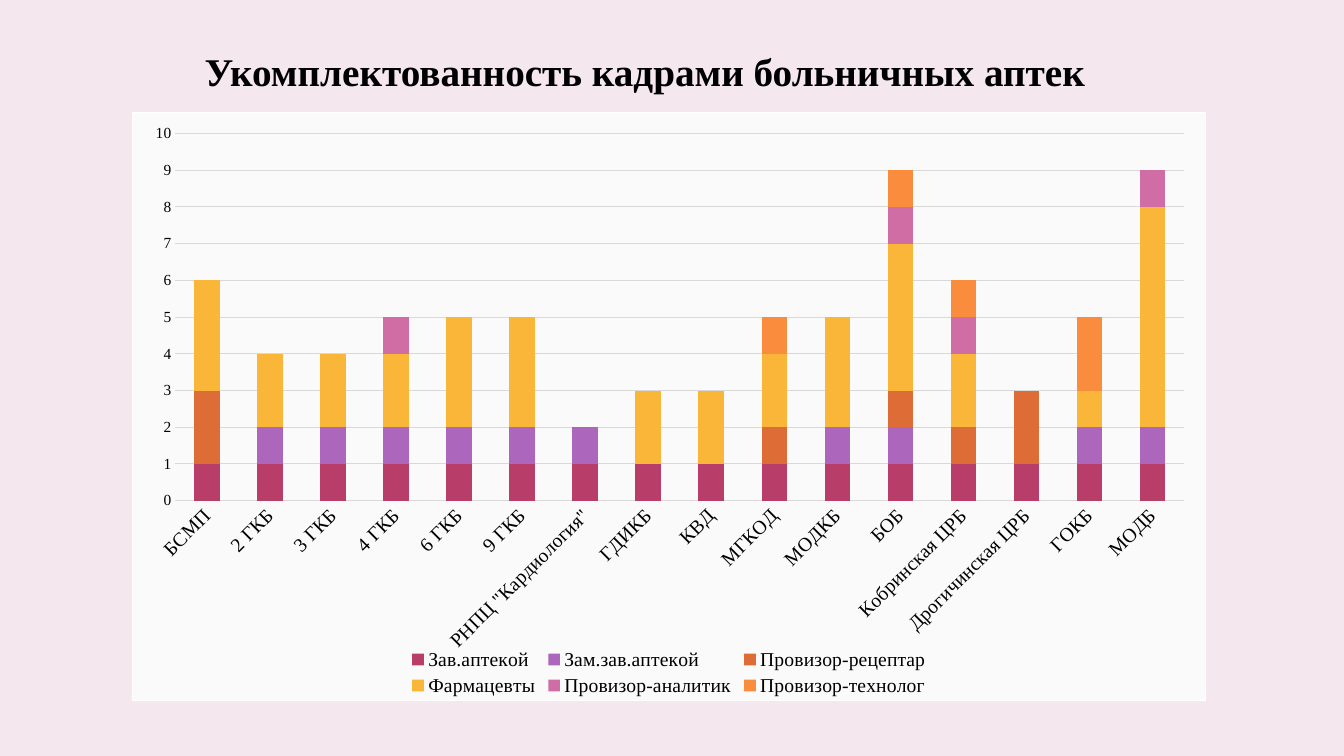
import pptx
import pptx.chart.data
import pptx.dml.color
import pptx.enum.chart
import pptx.enum.text
import pptx.oxml
import pptx.oxml.ns
import pptx.util

Pt = pptx.util.Pt
FONT = "Times New Roman"
COLORS = {
    "background": "F4E7ED", "panel": "FAFAFA", "border": "FFFFFF",
    "text": "000000", "grid": "D9D9D9",
    "Зав.аптекой": "B83D68", "Зам.зав.аптекой": "AC66BB",
    "Провизор-рецептар": "DE6C36", "Фармацевты": "F9B639",
    "Провизор-аналитик": "CF6DA4", "Провизор-технолог": "FA8D3D",
}
HOSPITALS = [
    "БСМП", "2 ГКБ", "3 ГКБ", "4 ГКБ", "6 ГКБ", "9 ГКБ",
    'РНПЦ "Кардиология"', "ГДИКБ", "КВД", "МГКОД", "МОДКБ", "БОБ",
    "Кобринская ЦРБ", "Дрогичинская ЦРБ", "ГОКБ", "МОДБ",
]
N = None
STAFF = {
    "Зав.аптекой": [1] * len(HOSPITALS),
    "Зам.зав.аптекой": [0, 1, 1, 1, 1, 1, 1, N, N, N, 1, 1, N, N, 1, 1],
    "Провизор-рецептар": [2, 0, 0, 0, 0, N, N, N, N, 1, N, 1, 1, 2, N, N],
    "Фармацевты": [3, 2, 2, 2, 3, 3, N, 2, 2, 2, 3, 4, 2, N, 1, 6],
    "Провизор-аналитик": [N, N, N, 1, N, N, N, N, N, N, N, 1, 1, N, N, 1],
    "Провизор-технолог": [N, N, N, N, N, N, N, N, N, 1, N, 1, 1, N, 2, N],
}


def color(name):
    return pptx.dml.color.RGBColor.from_string(COLORS[name])


def format_font(font, size, bold=False):
    for attribute, value in {"name": FONT, "size": Pt(size), "bold": bold}.items():
        setattr(font, attribute, value)
    font.color.rgb = color("text")


presentation = pptx.Presentation()
presentation.slide_width = Pt(960)
presentation.slide_height = Pt(540)
slide = presentation.slides.add_slide(presentation.slide_layouts[5])
slide.background.fill.solid()
slide.background.fill.fore_color.rgb = color("background")

# Title
title = slide.shapes.title
title.left, title.top, title.width, title.height = Pt(127), Pt(45.5), Pt(667), Pt(25)
title.text_frame.text = "Укомплектованность кадрами больничных аптек"
title.text_frame.word_wrap = True
title.text_frame.auto_size = pptx.enum.text.MSO_AUTO_SIZE.NONE
title.text_frame.vertical_anchor = pptx.enum.text.MSO_ANCHOR.TOP
paragraph = title.text_frame.paragraphs[0]
paragraph.alignment = pptx.enum.text.PP_ALIGN.CENTER
paragraph.line_spacing = Pt(18)
paragraph.space_after = Pt(6)
format_font(paragraph.runs[0].font, 28, bold=True)

# Stacked columns of staff by hospital
chart_data = pptx.chart.data.CategoryChartData(number_format="General")
chart_data.categories = HOSPITALS
for role, counts in STAFF.items():
    chart_data.add_series(role, counts)
chart = slide.shapes.add_chart(
    pptx.enum.chart.XL_CHART_TYPE.COLUMN_STACKED,
    Pt(94.3), Pt(80.3), Pt(767), Pt(420.5), chart_data,
).chart
chart.has_title = False
format_font(chart.font, 10)

plot = chart.plots[0]
plot.gap_width = 150
plot.overlap = 100
plot.vary_by_categories = False
for series in plot.series:
    series.format.fill.solid()
    series.format.fill.fore_color.rgb = color(series.name)
    series.invert_if_negative = False

category_axis, value_axis = chart.category_axis, chart.value_axis
for axis, size in ((category_axis, 14), (value_axis, 11)):
    axis.major_tick_mark = pptx.enum.chart.XL_TICK_MARK.NONE
    axis.minor_tick_mark = pptx.enum.chart.XL_TICK_MARK.NONE
    format_font(axis.tick_labels.font, size)
value_axis.minimum_scale = 0
value_axis.maximum_scale = 10
value_axis.major_unit = 1
value_axis.has_major_gridlines = True
value_axis.format.line.fill.background()
for line in (category_axis.format.line, value_axis.major_gridlines.format.line):
    line.color.rgb = color("grid")
    line.width = Pt(0.75)
body = category_axis._element.find(".//" + pptx.oxml.ns.qn("a:bodyPr"))
body.set("rot", "-2700000")
body.set("vert", "horz")

chart.has_legend = True
chart.legend.position = pptx.enum.chart.XL_LEGEND_POSITION.BOTTOM
chart.legend.include_in_layout = False
format_font(chart.legend.font, 14)

# Plot area position, as fractions of the chart
plot_area = chart._chartSpace.chart.plotArea
for old_layout in plot_area.findall(pptx.oxml.ns.qn("c:layout")):
    plot_area.remove(old_layout)
fractions = {"x": 0.04, "y": 0.035, "w": 0.94, "h": 0.625}
modes = '<c:layoutTarget val="inner"/><c:xMode val="edge"/><c:yMode val="edge"/>'
sizes = "".join(f'<c:{key} val="{value}"/>' for key, value in fractions.items())
plot_area.insert(0, pptx.oxml.parse_xml(
    f'<c:layout {pptx.oxml.ns.nsdecls("c")}><c:manualLayout>{modes}{sizes}'
    "</c:manualLayout></c:layout>"))

# Chart panel fill and border
chart._chartSpace.chart.addnext(pptx.oxml.parse_xml(
    f'<c:spPr {pptx.oxml.ns.nsdecls("c", "a")}>'
    f'<a:solidFill><a:srgbClr val="{COLORS["panel"]}"/></a:solidFill>'
    f'<a:ln w="{Pt(0.75)}"><a:solidFill><a:srgbClr val="{COLORS["border"]}"/>'
    "</a:solidFill></a:ln></c:spPr>"))

presentation.save("out.pptx")
